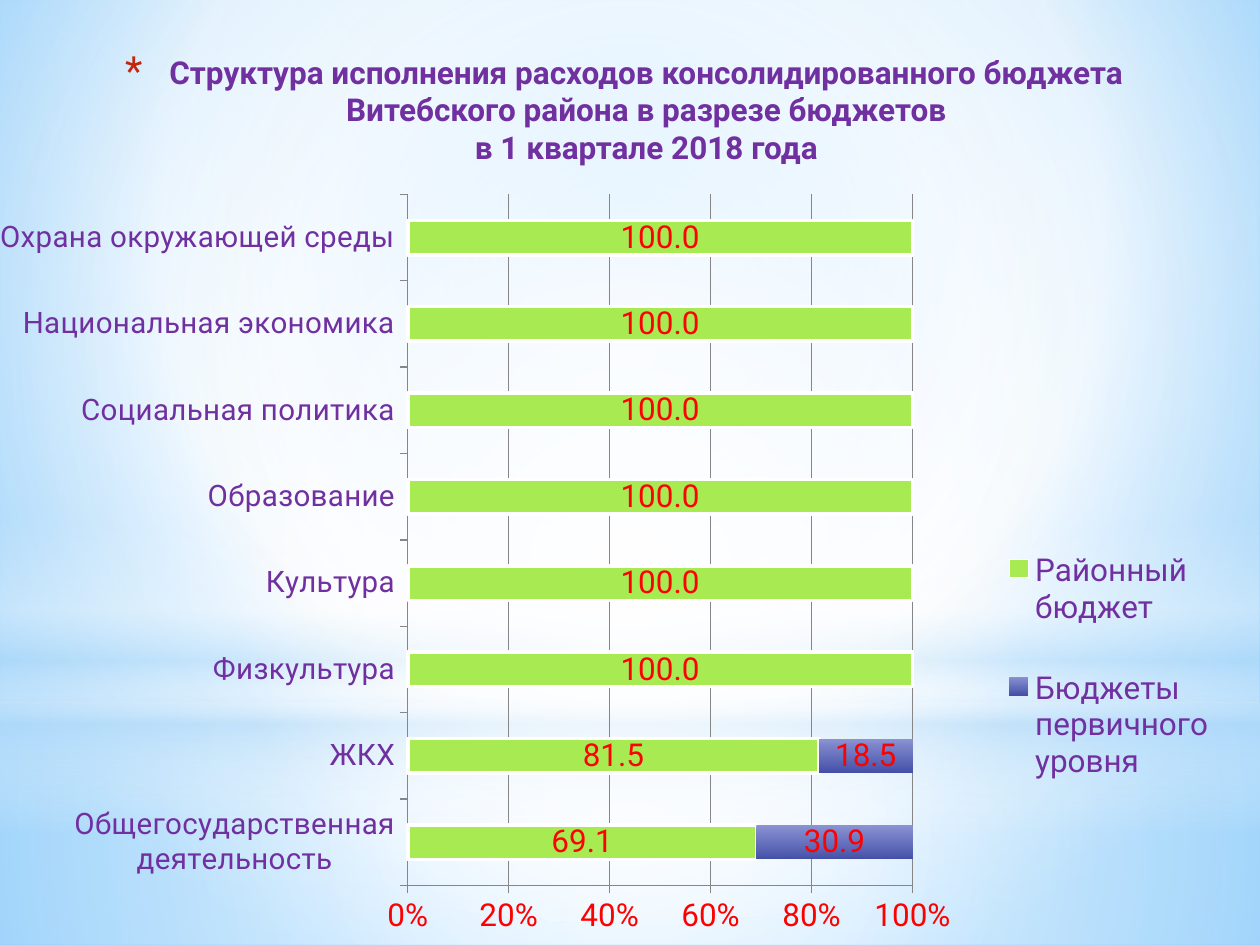
from lxml import etree
from pptx import Presentation
from pptx.chart.data import CategoryChartData
from pptx.dml.color import RGBColor
from pptx.enum.chart import XL_CHART_TYPE, XL_LEGEND_POSITION, XL_TICK_MARK
from pptx.enum.shapes import MSO_SHAPE
from pptx.enum.text import MSO_ANCHOR, PP_ALIGN
from pptx.oxml import parse_xml
from pptx.oxml.ns import nsdecls, qn
from pptx.util import Cm, Pt

BAR = XL_CHART_TYPE.BAR_STACKED_100
RIGHT = XL_LEGEND_POSITION.RIGHT
OUTSIDE = XL_TICK_MARK.OUTSIDE
RECTANGLE, OVAL = MSO_SHAPE.RECTANGLE, MSO_SHAPE.OVAL
CENTER, MIDDLE = PP_ALIGN.CENTER, MSO_ANCHOR.MIDDLE

FONT = "Roboto"
PURPLE, RED, GREY, WHITE, PALE = "7030A0", "FF0000", "868686", "FFFFFF", "B4DCFA"
CENTRE = (50, 50, 50, 50)
WIDTH, HEIGHT = 25.4, 19.05
HORIZON = 14.17

TITLE = ("Структура исполнения расходов консолидированного бюджета\v"
         "Витебского района в разрезе бюджетов\v"
         "в 1 квартале 2018 года")
SECTORS = ["Общегосударственная деятельность", "ЖКХ", "Физкультура", "Культура",
           "Образование", "Социальная политика", "Национальная экономика",
           "Охрана окружающей среды"]
DISTRICT = [69.1, 81.5] + [100] * 6
PRIMARY = [30.9, 18.5] + [None] * 6


def color(value):
    """Turn a hex string into a colour."""
    return RGBColor.from_string(value)


def style_font(font, size, value, bold=False):
    """Set face, size, weight and colour of a font."""
    font.name, font.size, font.bold = FONT, Pt(size), bold
    font.color.rgb = color(value)


def fill_gradient(fill, element, stops, focus=None):
    """Fill with (position, colour, opacity) stops, circular if a focus is given."""
    fill.solid()
    fill.fore_color.rgb = color(WHITE)
    marks = "".join(
        f'<a:gs pos="{position * 1000}"><a:srgbClr val="{value}">'
        f'<a:alpha val="{opacity * 1000}"/></a:srgbClr></a:gs>'
        for position, value, opacity in stops)
    if focus:
        left, top, right, bottom = (side * 1000 for side in focus)
        direction = (f'<a:path path="circle"><a:fillToRect l="{left}" t="{top}" '
                     f'r="{right}" b="{bottom}"/></a:path>')
    else:
        direction = '<a:lin ang="5400000" scaled="0"/>'
    solid = element.xpath(".//a:solidFill")[0]
    solid.getparent().replace(solid, parse_xml(
        f'<a:gradFill {nsdecls("a")} rotWithShape="1">'
        f'<a:gsLst>{marks}</a:gsLst>{direction}</a:gradFill>'))


def add_glow(slide, kind, top, height, stops, focus=None):
    """Add a full-width translucent gradient shape."""
    glow = slide.shapes.add_shape(kind, 0, Cm(top), Cm(WIDTH), Cm(height))
    glow.shadow.inherit = False
    glow.line.fill.background()
    fill_gradient(glow.fill, glow.element, stops, focus)


def add_backdrop(slide):
    """Paint the sky, the water and the horizon."""
    fill_gradient(slide.background.fill, slide.element,
                  [(0, "9ED5FF", 100), (60, WHITE, 100), (100, "5BB9FF", 100)],
                  (20, 10, 20, 60))
    add_glow(slide, RECTANGLE, HORIZON, HEIGHT - HORIZON,
             [(0, WHITE, 91), (37, WHITE, 76), (100, PALE, 79)], CENTRE)
    add_glow(slide, RECTANGLE, 0, HORIZON,
             [(0, WHITE, 89), (48, WHITE, 62), (100, PALE, 79)], CENTRE)
    add_glow(slide, RECTANGLE, 10.46, 6.35,
             [(0, WHITE, 0), (29, WHITE, 30), (45, PALE, 40),
              (55, WHITE, 26), (65, PALE, 60), (100, WHITE, 0)])
    add_glow(slide, OVAL, 4.45, HORIZON,
             [(0, WHITE, 100), (56, WHITE, 0)], CENTRE)


def add_title(slide):
    """Add the centred title with its asterisk bullet."""
    frame = slide.shapes.add_textbox(Cm(0.89), Cm(0.91), Cm(23.39), Cm(2.59)).text_frame
    frame.word_wrap = True
    frame.vertical_anchor = MIDDLE
    heading = frame.paragraphs[0]
    heading.text = TITLE
    heading.alignment = CENTER
    style_font(heading.font, 18, PURPLE, bold=True)
    for line in heading.runs:
        style_font(line.font, 18, PURPLE, bold=True)
    properties = heading._p.get_or_add_pPr()
    properties.set("marL", str(Cm(0.89)))
    properties.set("indent", str(-Cm(0.89)))
    bullet = parse_xml(
        f'<a:pPr {nsdecls("a")}><a:buClr><a:srgbClr val="C3260C"/></a:buClr>'
        '<a:buSzPct val="128000"/><a:buFont typeface="Roboto"/><a:buChar char="*"/></a:pPr>')
    for position, part in enumerate(list(bullet)):
        properties.insert(position, part)


def place(parent, index, x, y, w, h, inner=False):
    """Give a chart part a manual layout in fractions of the chart."""
    for old in parent.findall(qn("c:layout")):
        parent.remove(old)
    layout = parse_xml(f'<c:layout {nsdecls("c")}><c:manualLayout/></c:layout>')
    settings = [("layoutTarget", "inner")] if inner else []
    settings += [("xMode", "edge"), ("yMode", "edge"),
                 ("x", x), ("y", y), ("w", w), ("h", h)]
    for tag, value in settings:
        etree.SubElement(layout[0], qn(f"c:{tag}")).set("val", str(value))
    parent.insert(index, layout)


def style_axis(axis, size, value):
    """Set the ticks, line and labels of an axis."""
    axis.major_tick_mark = OUTSIDE
    axis.format.line.color.rgb = color(GREY)
    style_font(axis.tick_labels.font, size, value)


def label_values(series):
    """Show the values of a series with one decimal."""
    labels = series.data_labels
    labels.show_value = True
    labels.number_format = "0.0"
    labels.number_format_is_linked = False
    style_font(labels.font, 18, RED)


def add_budget_chart(slide):
    """Add the bar chart of spending shares by budget level."""
    data = CategoryChartData(number_format="0.0")
    data.categories = SECTORS
    data.add_series("Районный бюджет", DISTRICT)
    data.add_series("Бюджеты первичного уровня", PRIMARY)
    chart = slide.shapes.add_chart(
        BAR, 0, Cm(3.89), Cm(WIDTH), Cm(15.16), data).chart
    chart.has_title = False
    style_font(chart.font, 18, RED)

    style_axis(chart.category_axis, 16.9, PURPLE)
    shares = chart.value_axis
    style_axis(shares, 18, RED)
    shares.major_unit = 0.2
    shares.tick_labels.number_format = "0%"
    shares.tick_labels.number_format_is_linked = False
    shares.has_major_gridlines = True
    shares.major_gridlines.format.line.color.rgb = color(GREY)

    plot = chart.plots[0]
    plot.gap_width, plot.overlap = 150, 100
    plot.vary_by_categories = False
    district, primary = plot.series
    district.format.fill.solid()
    district.format.fill.fore_color.rgb = color("A7EA52")
    district.format.line.color.rgb = color(WHITE)
    district.format.line.width = Pt(2)
    fill_gradient(primary.format.fill, primary._element,
                  [(0, "8B93D3", 100), (100, "4450A8", 100)])
    for series in (district, primary):
        label_values(series)

    chart.has_legend = True
    legend = chart.legend
    legend.position = RIGHT
    legend.include_in_layout = False
    style_font(legend.font, 18, PURPLE)
    place(legend._element, 1, 0.78, 0.42, 0.2, 0.42)
    place(chart._chartSpace.chart.plotArea, 0, 0.323, 0.002, 0.401, 0.919, inner=True)


def main():
    """Build and save the slide."""
    deck = Presentation()
    deck.slide_width, deck.slide_height = Cm(WIDTH), Cm(HEIGHT)
    slide = deck.slides.add_slide(deck.slide_layouts[6])
    add_backdrop(slide)
    add_title(slide)
    add_budget_chart(slide)
    deck.save("out.pptx")


if __name__ == "__main__":
    main()
